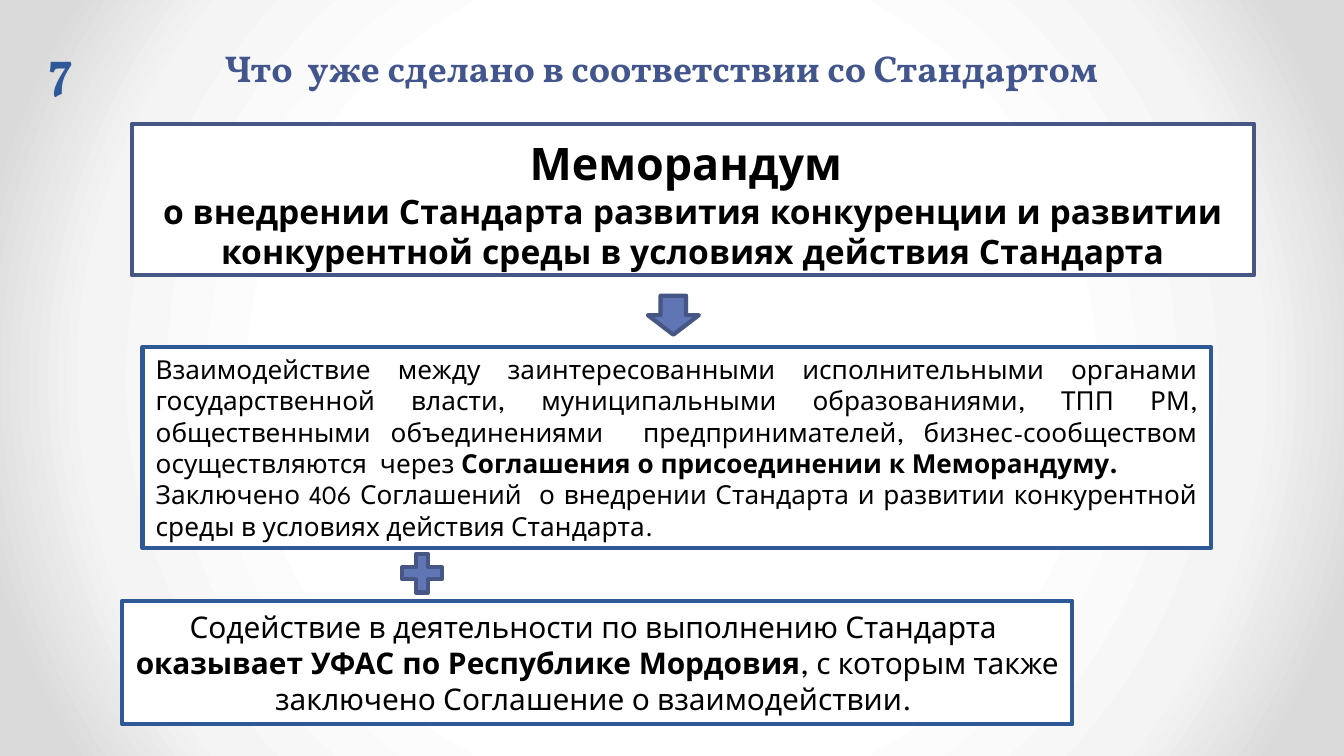
from pptx import Presentation
from pptx.dml.color import RGBColor
from pptx.enum.shapes import MSO_SHAPE
from pptx.enum.text import MSO_ANCHOR, PP_ALIGN
from pptx.oxml import parse_xml
from pptx.oxml.ns import nsdecls, qn
from pptx.util import Inches, Pt

RECT, ARROW, PLUS = MSO_SHAPE.RECTANGLE, MSO_SHAPE.DOWN_ARROW, MSO_SHAPE.MATH_PLUS
LEFT, CENTER, JUSTIFY = PP_ALIGN.LEFT, PP_ALIGN.CENTER, PP_ALIGN.JUSTIFY
MIDDLE, TOP = MSO_ANCHOR.MIDDLE, MSO_ANCHOR.TOP

BLACK = RGBColor(0x00, 0x00, 0x00)
WHITE = RGBColor(0xFF, 0xFF, 0xFF)
BLUE = RGBColor(0x2F, 0x58, 0x97)
SLATE = RGBColor(0x47, 0x57, 0x85)
STEEL = RGBColor(0x60, 0x76, 0xB4)
INDIGO = RGBColor(0x42, 0x56, 0x8D)
GLOW = [(50, WHITE), (76, RGBColor(0xF4, 0xF4, 0xF4)), (92, RGBColor(0xDA, 0xDA, 0xDA))]

BODY, HEAD = "League Spartan", "Vollkorn"
WIDTH = Inches(10)
HEIGHT = WIDTH * 9 // 16

# Each paragraph is a list of runs: (text, size, bold)
MEMO = [
    [("Меморандум", 24, True), (" ", 28, True)],
    [("о внедрении Стандарта развития конкуренции и развитии конкурентной "
      "среды в условиях действия Стандарта", 18, True)],
]
DEALS = [
    [("Взаимодействие между заинтересованными исполнительными органами "
      "государственной власти, муниципальными образованиями, ТПП РМ, "
      "общественными объединениями  предпринимателей, бизнес-сообществом "
      "осуществляются  через ", 14, False),
     ("Соглашения о присоединении к Меморандуму. ", 14, True)],
    [("Заключено 406 Соглашений  о внедрении Стандарта и развитии конкурентной "
      "среды в условиях действия Стандарта. ", 14, False)],
]
HELP = [
    [("Содействие в деятельности по выполнению Стандарта  ", 16, False),
     ("оказывает УФАС по Республике Мордовия", 16, True),
     (", с которым также заключено Соглашение о взаимодействии. ", 16, False)],
]
NUMBER = [[("7", 28, True)]]
TITLE = [[("Что  уже сделано в соответствии со Стандартом", 20, True)]]

# Place, outline, alignment, text
BOXES = [
    ((0.98, 0.92, 8.35, 1.13), SLATE, CENTER, MEMO),
    ((1.06, 2.58, 7.95, 1.5), BLUE, JUSTIFY, DEALS),
    ((0.91, 4.47, 7.07, 0.92), BLUE, CENTER, HELP),
]
SIGNS = [
    (ARROW, (4.82, 2.2, 0.38, 0.29)),
    (PLUS, (2.94, 4.07, 0.4, 0.39)),
]
# Place, colour, wrap, left margin, text
LABELS = [
    ((0.26, 0.22, 0.4, 0.57), BLUE, False, 0.1, NUMBER),
    ((1.3, 0.29, 7.71, 0.44), INDIGO, True, 0.37, TITLE),
]


def write(shape, paras, font=BODY, color=BLACK, align=LEFT, anchor=TOP, wrap=True):
    frame = shape.text_frame
    frame.word_wrap = wrap
    frame.vertical_anchor = anchor
    for i, runs in enumerate(paras):
        para = frame.add_paragraph() if i else frame.paragraphs[0]
        para.alignment = align
        for text, size, bold in runs:
            run = para.add_run()
            run.text = text
            run.font.name = font
            run.font.size = Pt(size)
            run.font.bold = bold
            run.font.color.rgb = color


def draw(slide, kind, place, fill, line):
    shape = slide.shapes.add_shape(kind, *map(Inches, place))
    shape.shadow.inherit = False
    shape.fill.solid()
    shape.fill.fore_color.rgb = fill
    shape.line.color.rgb = line
    shape.line.width = Pt(2.25)
    return shape


def glow(slide):
    """Fill the background with a radial gradient from the centre."""
    slide.background.fill.gradient()
    old = slide.element.find(".//" + qn("a:gradFill"))
    stops = "".join(
        f'<a:gs pos="{pos * 1000}"><a:srgbClr val="{color}"/></a:gs>'
        for pos, color in GLOW)
    new = parse_xml(
        f'<a:gradFill {nsdecls("a")} rotWithShape="1"><a:gsLst>{stops}</a:gsLst>'
        '<a:path path="circle"><a:fillToRect l="50000" t="50000" r="50000" '
        'b="50000"/></a:path></a:gradFill>')
    old.getparent().replace(old, new)


def main():
    deck = Presentation()
    deck.slide_width, deck.slide_height = WIDTH, HEIGHT
    slide = deck.slides.add_slide(deck.slide_layouts[6])
    glow(slide)
    for place, line, align, paras in BOXES:
        box = draw(slide, RECT, place, WHITE, line)
        write(box, paras, align=align, anchor=MIDDLE)
    for kind, place in SIGNS:
        draw(slide, kind, place, STEEL, SLATE)
    for place, color, wrap, margin, paras in LABELS:
        label = slide.shapes.add_textbox(*map(Inches, place))
        label.text_frame.margin_left = Inches(margin)
        write(label, paras, font=HEAD, color=color, wrap=wrap)
    deck.save("out.pptx")


if __name__ == "__main__":
    main()
